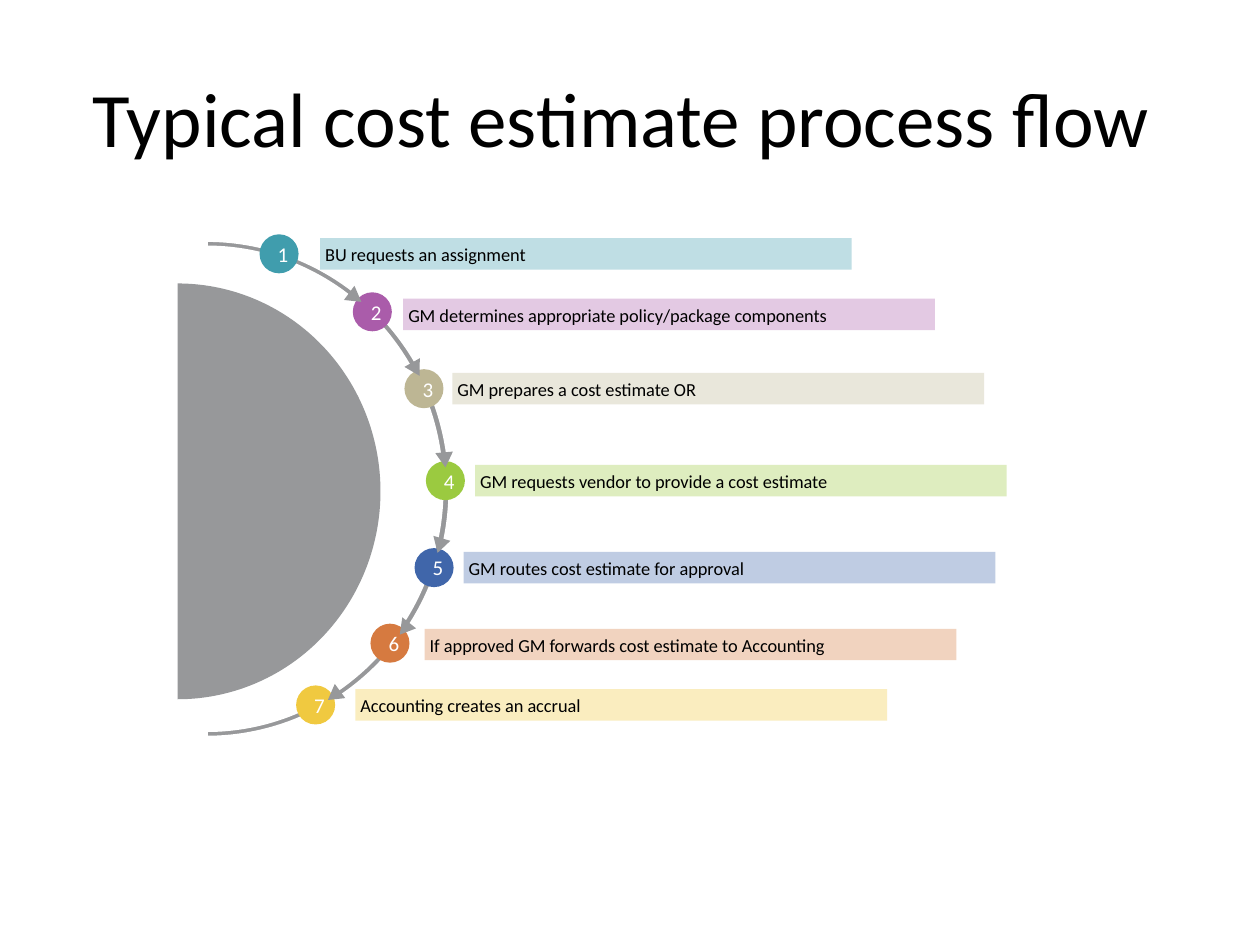
from lxml import etree
from pptx import Presentation
from pptx.dml.color import RGBColor
from pptx.enum.shapes import MSO_SHAPE
from pptx.enum.text import MSO_ANCHOR, PP_ALIGN
from pptx.oxml.ns import qn
from pptx.util import Inches, Pt

RECT, OVAL = MSO_SHAPE.RECTANGLE, MSO_SHAPE.OVAL
HEAD = MSO_SHAPE.ISOSCELES_TRIANGLE
LEFT, CENTER = PP_ALIGN.LEFT, PP_ALIGN.CENTER
TOP, MIDDLE = MSO_ANCHOR.TOP, MSO_ANCHOR.MIDDLE
FONT = "Calibri"
BLACK = RGBColor(0, 0, 0)
WHITE = RGBColor(255, 255, 255)
GRAY = RGBColor(0x97, 0x98, 0x9A)

TITLE = "Typical cost estimate process flow "
# text, dot colour, bar colour, dot left and top, bar left and top
STEPS = [
    ("BU requests an assignment", "409DAD", "BFDEE4", (2.06, 1.86), (2.54, 1.89)),
    ("GM determines appropriate policy/package components",
     "AA5CAA", "E3C9E3", (2.8, 2.32), (3.2, 2.37)),
    ("GM prepares a cost estimate OR", "BDB694", "E9E7DB", (3.21, 2.93), (3.59, 2.96)),
    ("GM requests vendor to provide a cost estimate",
     "9BCA40", "DEEDBF", (3.38, 3.66), (3.77, 3.69)),
    ("GM routes cost estimate for approval",
     "4066AA", "BFCCE3", (3.29, 4.35), (3.68, 4.38)),
    ("If approved GM forwards cost estimate to Accounting",
     "D67A40", "F1D3BF", (2.94, 4.95), (3.37, 4.99)),
    ("Accounting creates an accrual", "F0C940", "FAEDBF", (2.35, 5.44), (2.82, 5.47)),
]
# left, top, turn in degrees
HEADS = [(2.75, 2.3, 126.4), (3.23, 2.87, 150.7), (3.46, 3.59, 174.9),
         (3.42, 4.27, 196.4), (3.14, 4.93, 218.7), (2.58, 5.46, 233.6)]
DOT = (0.31, 0.31)
BAR = (4.22, 0.25)
TIP = (0.14, 0.12)
QUARTER = 90 * 60000

prs = Presentation()
prs.slide_width, prs.slide_height = Inches(10), Inches(7.5)
slide = prs.slides.add_slide(prs.slide_layouts[5])
shapes = slide.shapes


def paint(shape, fill):
    shape.shadow.inherit = False
    shape.fill.solid()
    shape.fill.fore_color.rgb = fill
    shape.line.fill.background()
    return shape


def add(kind, pos, size, fill):
    return paint(shapes.add_shape(kind, *map(Inches, pos + size)), fill)


def write(shape, text, size, color, align, anchor):
    frame = shape.text_frame
    frame.text = text
    frame.word_wrap = True
    frame.vertical_anchor = anchor
    para = frame.paragraphs[0]
    para.alignment = align
    font = para.runs[0].font
    font.name, font.size, font.color.rgb = FONT, Pt(size), color
    return frame


def half(x, y, *radii):
    """Right half of an ellipse; a second pair of radii cuts out the inside."""
    points, arcs = [], {}
    for rx, ry in radii:
        side = [(x, y - ry), (x + rx, y), (x, y + ry)]
        start, sweep = 3 * QUARTER, QUARTER
        if points:
            side, start, sweep = side[::-1], QUARTER, -QUARTER
        first = len(points)
        arcs[first] = rx, ry, start, sweep
        arcs[first + 1] = rx, ry, 0, sweep
        points += side
    spots = [(Inches(a), Inches(b)) for a, b in points]
    build = shapes.build_freeform(*spots[0])
    build.add_line_segments(spots[1:], close=True)
    shape = paint(build.convert_to_shape(), GRAY)
    # Turn the straight segments into quarter arcs
    for i, seg in enumerate(list(shape._element.iter(qn("a:lnTo")))):
        if i in arcs:
            rx, ry, start, sweep = arcs[i]
            arc = etree.Element(qn("a:arcTo"), wR=str(Inches(rx)), hR=str(Inches(ry)),
                                stAng=str(start), swAng=str(sweep))
            seg.getparent().replace(seg, arc)
    return shape


# Title
title = shapes.title
title.left, title.top, title.width, title.height = map(Inches, (0.5, 0.3, 9, 1.25))
write(title, TITLE, 44, BLACK, CENTER, MIDDLE)

# Ring and half disc
ring = half(1.64, 3.88, (1.93, 1.97), (1.87, 1.92))
ring.line.color.rgb = WHITE
ring.line.width = Pt(1.5)
half(1.41, 3.9, (1.61, 1.65))

# Bars and numbered dots
for num, (text, dark, light, dot, bar) in enumerate(STEPS, 1):
    label = add(RECT, bar, BAR, RGBColor.from_string(light))
    frame = write(label, text, 10.5, BLACK, LEFT, TOP)
    frame.margin_left = frame.margin_right = Inches(0.04)
    frame.margin_top = frame.margin_bottom = Inches(0.04)
    mark = add(OVAL, dot, DOT, RGBColor.from_string(dark))
    write(mark, str(num), 12, WHITE, LEFT, MIDDLE)

# Arrowheads along the ring
for x, y, turn in HEADS:
    add(HEAD, (x, y), TIP, GRAY).rotation = turn

prs.save("out.pptx")
